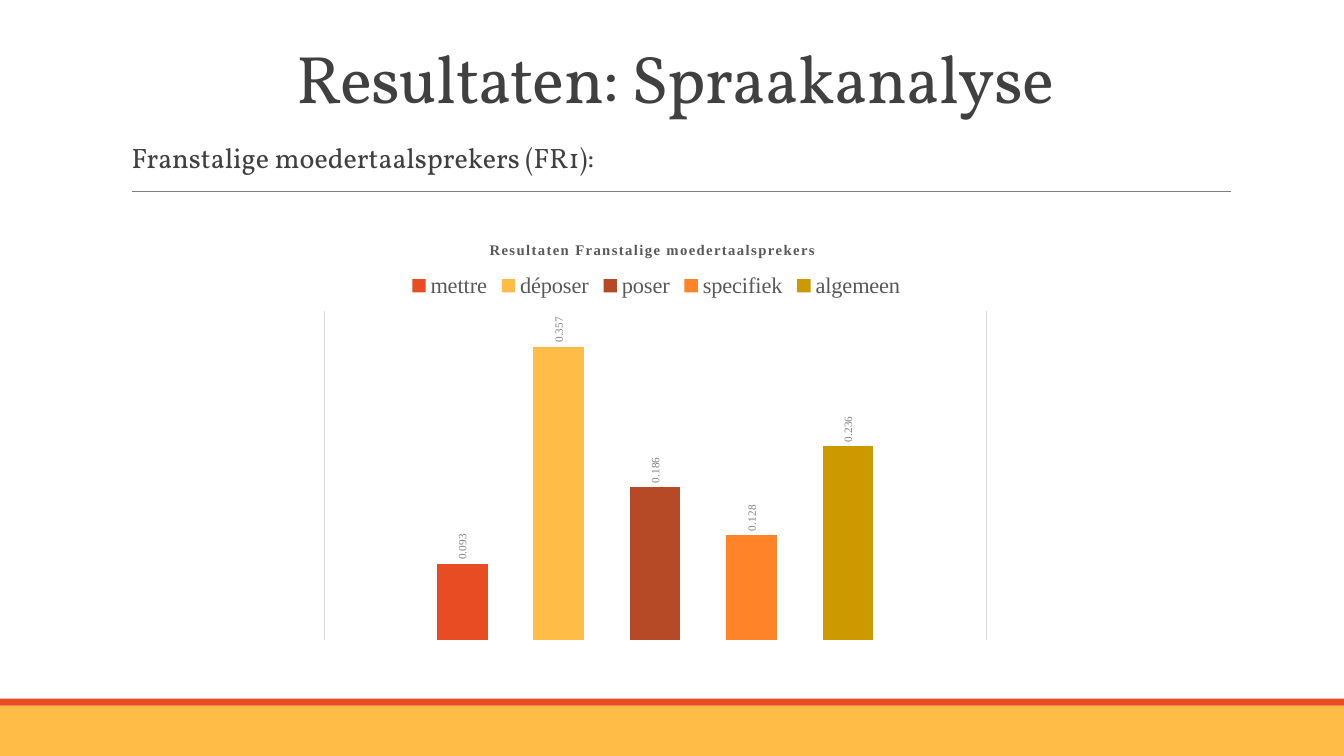
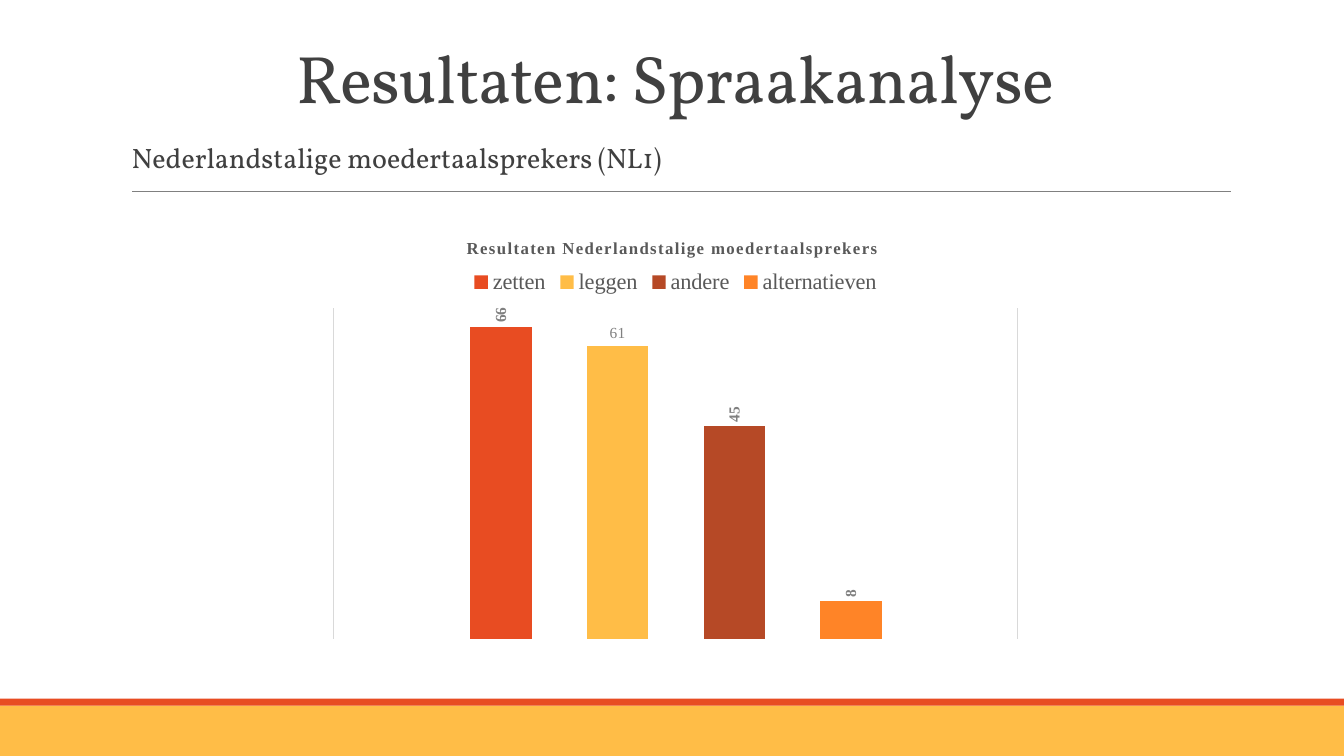
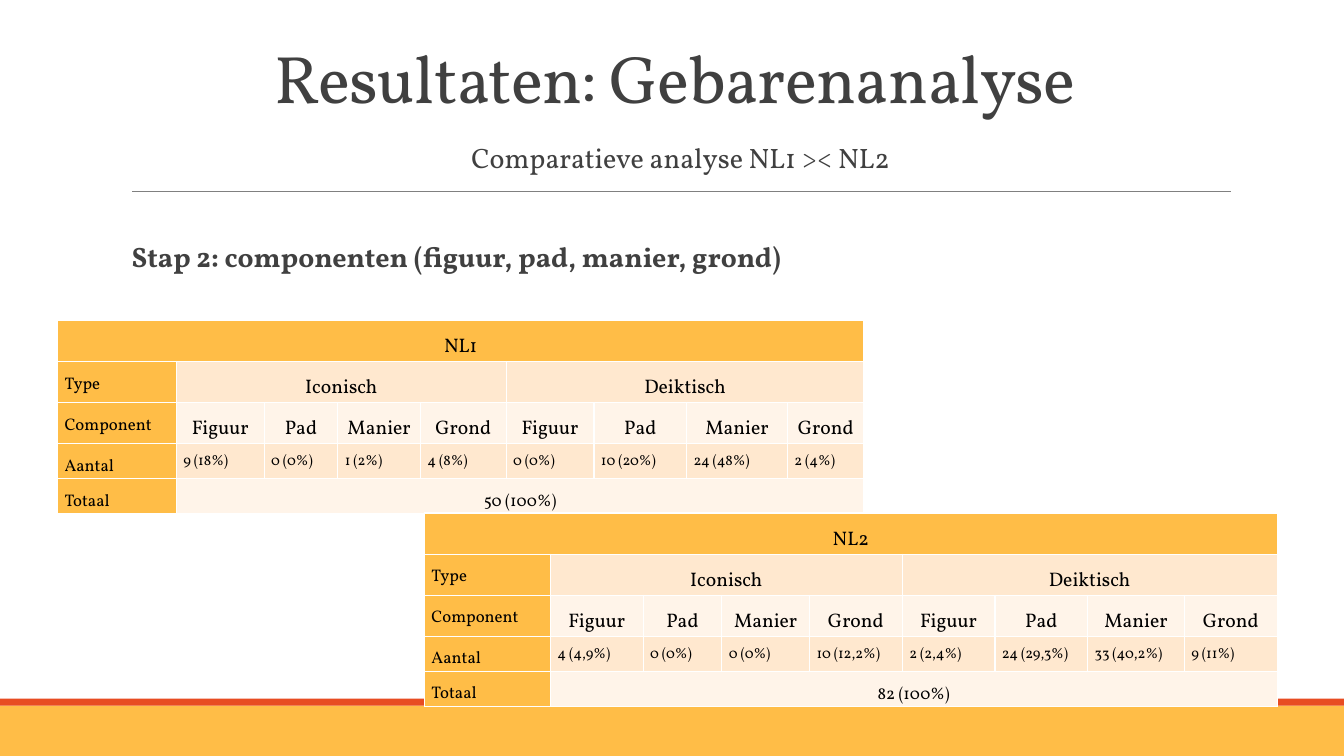
"""Build three slides with the speech and gesture results."""
import pptx
import pptx.chart.data
import pptx.dml.color
import pptx.enum.chart
import pptx.enum.shapes
import pptx.enum.text
import pptx.oxml
import pptx.oxml.ns
import pptx.util

AMBER, RED, RUST, ORANGE, OLIVE = "FFBD47", "E84C22", "B64926", "FF8427", "CC9900"
DARK, TITLE_GRAY, GRAY, LIGHT_GRAY = "404040", "595959", "808080", "D9D9D9"
PEACH, CREAM, WHITE, BLACK = "FFE8CF", "FFF4E9", "FFFFFF", "000000"
SANS, SERIF = "Vollkorn", "Times New Roman"
LEFT = pptx.enum.text.PP_ALIGN.LEFT
CENTER = pptx.enum.text.PP_ALIGN.CENTER
JUSTIFY = pptx.enum.text.PP_ALIGN.JUSTIFY
MIDDLE = pptx.enum.text.MSO_ANCHOR.MIDDLE
TOP = pptx.enum.text.MSO_ANCHOR.TOP
BOTTOM = pptx.enum.text.MSO_ANCHOR.BOTTOM


def color(value):
    return pptx.dml.color.RGBColor.from_string(value)


def write(frame, text, size=20, ink=DARK, name=SANS, bold=False, align=LEFT,
          spacing=0.9, anchor=None):
    paragraph = frame.paragraphs[0]
    paragraph.alignment = align
    paragraph.line_spacing = spacing
    if anchor is not None:
        frame.vertical_anchor = anchor
    run = paragraph.add_run()
    run.text = text
    run.font.size = pptx.util.Pt(size)
    run.font.name = name
    run.font.bold = bold
    run.font.color.rgb = color(ink)


presentation = pptx.Presentation()
presentation.slide_width = pptx.util.Inches(13.33)
presentation.slide_height = pptx.util.Inches(7.5)
column = presentation.slide_width / 100
row = presentation.slide_height / 100
grid = (column, row, column, row)

headings = [
    ("Resultaten: Spraakanalyse", "Franstalige moedertaalsprekers (FR1):", LEFT),
    ("Resultaten: Spraakanalyse", "Nederlandstalige moedertaalsprekers (NL1)", LEFT),
    ("Resultaten: Gebarenanalyse", "Comparatieve analyse NL1 >< NL2", CENTER),
]
bands = [(93.33, 6.67, AMBER), (92.4, 0.93, RED)]
for title, subtitle, align in headings:
    slide = presentation.slides.add_slide(presentation.slide_layouts[6])
    for top, height, fill in bands:
        band = slide.shapes.add_shape(
            pptx.enum.shapes.MSO_SHAPE.RECTANGLE, 0, int(row * top),
            presentation.slide_width, int(row * height))
        band.shadow.inherit = False
        band.fill.solid()
        band.fill.fore_color.rgb = color(fill)
        band.line.fill.background()
    rule = slide.shapes.add_connector(
        pptx.enum.shapes.MSO_CONNECTOR.STRAIGHT, int(column * 9.83),
        int(row * 25.33), int(column * 91.6), int(row * 25.33))
    rule.line.color.rgb = color(GRAY)
    rule.line.width = pptx.util.Pt(0.5)
    rule.element.xpath("p:spPr")[0].append(
        pptx.oxml.parse_xml(f"<a:effectLst {pptx.oxml.ns.nsdecls('a')}/>"))

    title_box = slide.shapes.add_textbox(
        *(int(unit * share) for unit, share in zip(grid, (9, 4.13, 82.5, 12))))
    title_box.text_frame.word_wrap = True
    write(title_box.text_frame, title, size=48, align=CENTER, spacing=0.85, anchor=BOTTOM)
    title_box.element.xpath(".//a:rPr")[0].set("spc", "-50")

    lines = [(subtitle, 18.4, {"align": align})]
    if align == CENTER:
        lines.append(("Stap 2: componenten (figuur, pad, manier, grond)", 31.5, {"bold": True}))
    for text, top, style in lines:
        text_box = slide.shapes.add_textbox(
            *(int(unit * share) for unit, share in zip(grid, (9.8, top, 81.7, 6))))
        text_box.text_frame.word_wrap = True
        text_box.text_frame.margin_left = text_box.text_frame.margin_right = 0
        write(text_box.text_frame, text, **style)

charts = [
    {"title": "Resultaten Franstalige moedertaalsprekers", "title_size": 10.5,
     "box": (23.1, 29.33, 51.3, 56.53), "maximum": 0.4, "label_size": 8, "bold": False,
     "title_left": 0.256, "legend_left": 0.137, "shown": {},
     "values": {"mettre": 0.093, "déposer": 0.357, "poser": 0.186,
                "specifiek": 0.128, "algemeen": 0.236}},
    {"title": "Resultaten Nederlandstalige moedertaalsprekers", "title_size": 12,
     "box": (23.78, 28.8, 53.03, 56.93), "maximum": 70, "label_size": 11, "bold": True,
     "title_left": 0.202, "legend_left": 0.207, "shown": {"leggen": "61"},
     "values": {"zetten": 66, "leggen": 62, "andere": 45, "alternatieven": 8}},
]
for slide, plan in zip(presentation.slides, charts):
    data = pptx.chart.data.CategoryChartData()
    data.categories = ["1"]
    for name, value in plan["values"].items():
        data.add_series(name, [value])
    chart = slide.shapes.add_chart(
        pptx.enum.chart.XL_CHART_TYPE.COLUMN_CLUSTERED,
        *(int(unit * share) for unit, share in zip(grid, plan["box"])), data).chart
    chart.font.size = pptx.util.Pt(10)
    chart.font.name = "Calibri"
    chart.font.color.rgb = color(BLACK)

    chart.has_title = True
    write(chart.chart_title.text_frame, plan["title"], size=plan["title_size"],
          ink=TITLE_GRAY, name=SERIF, bold=True, align=CENTER, spacing=1.0)
    chart.element.xpath("c:chart/c:title//a:rPr")[0].set("spc", "100")
    chart.has_legend = True
    chart.legend.position = pptx.enum.chart.XL_LEGEND_POSITION.TOP
    chart.legend.include_in_layout = False
    chart.legend.font.size = pptx.util.Pt(16)
    chart.legend.font.name = SERIF
    chart.legend.font.color.rgb = color(TITLE_GRAY)

    chart.category_axis.visible = False
    chart.category_axis.has_major_gridlines = True
    gridline = chart.category_axis.major_gridlines.format.line
    gridline.color.rgb = color(LIGHT_GRAY)
    gridline.width = pptx.util.Pt(0.75)
    chart.value_axis.visible = False
    chart.value_axis.has_major_gridlines = False
    chart.value_axis.minimum_scale = 0
    chart.value_axis.maximum_scale = plan["maximum"]

    plot = chart.plots[0]
    plot.vary_by_categories = False
    plot.gap_width = 444
    plot.overlap = -90
    for series, fill in zip(plot.series, (RED, AMBER, RUST, ORANGE, OLIVE)):
        series.format.fill.solid()
        series.format.fill.fore_color.rgb = color(fill)
        labels = series.data_labels
        labels.show_value = True
        labels.position = pptx.enum.chart.XL_LABEL_POSITION.OUTSIDE_END
        labels.font.size = pptx.util.Pt(plan["label_size"])
        labels.font.name = SERIF
        labels.font.bold = plan["bold"]
        labels.font.color.rgb = color(GRAY)
        if series.name in plan["shown"]:
            label = series.points[0].data_label
            write(label.text_frame, plan["shown"][series.name], size=plan["label_size"],
                  ink=GRAY, name=SERIF, align=CENTER, spacing=1.0)
            label.position = pptx.enum.chart.XL_LABEL_POSITION.OUTSIDE_END
    for body in chart.element.xpath(".//c:ser/c:dLbls/c:txPr/a:bodyPr"):
        body.set("rot", "-5400000")
        body.set("vert", "horz")

    layouts = [
        ("c:title", 1, {"x": plan["title_left"], "y": 0.04}),
        ("c:legend", 1, {"x": plan["legend_left"], "y": 0.11}),
        ("c:plotArea", 0, {"x": 0.02, "y": 0.21, "w": 0.96, "h": 0.77}),
    ]
    for tag, index, shares in layouts:
        part = chart.element.xpath(f"c:chart/{tag}")[0]
        for old_layout in part.xpath("c:layout"):
            part.remove(old_layout)
        target = '<c:layoutTarget val="inner"/>' if tag == "c:plotArea" else ""
        modes = '<c:xMode val="edge"/><c:yMode val="edge"/>'
        places = "".join(f'<c:{key} val="{share}"/>' for key, share in shares.items())
        part.insert(index, pptx.oxml.parse_xml(
            f"<c:layout {pptx.oxml.ns.nsdecls('c')}><c:manualLayout>"
            f"{target}{modes}{places}</c:manualLayout></c:layout>"))

components = ["Figuur", "Pad", "Manier", "Grond"]
tables = [
    ("NL1", 4.28, 42.4, (8.85, 6.53, 5.48, 6.15, 6.38, 6.53, 6.9, 7.5, 5.7),
     ["9 (18%)", "0 (0%)", "1 (2%)", "4 (8%)", "0 (0%)", "10 (20%)", "24 (48%)", "2 (4%)"],
     "50 (100%)"),
    ("NL2", 31.58, 67.87, (9.38, 6.9, 5.85, 6.53, 6.9, 6.9, 6.9, 7.2, 6.9),
     ["4 (4,9%)", "0 (0%)", "0 (0%)", "10 (12,2%)", "2 (2,4%)", "24 (29,3%)",
      "33 (40,2%)", "9 (11%)"],
     "82 (100%)"),
]
row_heights = (5.43, 5.43, 5.43, 4.65, 4.65)
row_fills = (AMBER, PEACH, CREAM, PEACH, CREAM)
merges = [(0, 0, 8), (1, 1, 4), (1, 5, 8), (4, 1, 8)]
label_style = {"size": 12, "align": JUSTIFY, "spacing": 1.5, "anchor": TOP}
head_style = {"size": 14, "align": CENTER, "spacing": 1.5, "anchor": MIDDLE}
count_style = {"size": 10.5, "spacing": 1.06, "anchor": MIDDLE}
total_style = {**head_style, "size": 12}
for heading, left, top, widths, counts, total in tables:
    shape = presentation.slides[2].shapes.add_table(
        5, 9, int(column * left), int(row * top),
        int(column * sum(widths)), int(row * sum(row_heights)))
    table = shape.table
    table.first_row = table.horz_banding = False
    for table_column, width in zip(table.columns, widths):
        table_column.width = int(column * width)
    for table_row, height in zip(table.rows, row_heights):
        table_row.height = int(row * height)
    for y, first, last in merges:
        table.cell(y, first).merge(table.cell(y, last))

    rows = [
        ({0: heading}, head_style),
        ({0: "Type", 1: "Iconisch", 5: "Deiktisch"}, head_style),
        (dict(enumerate(["Component"] + components * 2)), head_style),
        (dict(enumerate(["Aantal"] + counts)), count_style),
        ({0: "Totaal", 1: total}, total_style),
    ]
    for y, (texts, style) in enumerate(rows):
        for x in range(9):
            cell = table.cell(y, x)
            cell.margin_left = cell.margin_right = pptx.util.Inches(0.07)
            cell.margin_top = cell.margin_bottom = 0
            cell.fill.solid()
            cell.fill.fore_color.rgb = color(row_fills[y] if x else AMBER)
            if x in texts:
                cell_style = label_style if x == 0 and y else style
                cell.vertical_anchor = cell_style["anchor"]
                write(cell.text_frame, texts[x], ink=BLACK,
                      **{key: item for key, item in cell_style.items() if key != "anchor"})
    for properties in shape.element.xpath(".//a:tcPr"):
        for index, side in enumerate("LRTB"):
            properties.insert(index, pptx.oxml.parse_xml(
                f'<a:ln{side} {pptx.oxml.ns.nsdecls("a")} w="12700"><a:solidFill>'
                f'<a:srgbClr val="{WHITE}"/></a:solidFill></a:ln{side}>'))

presentation.save("out.pptx")
